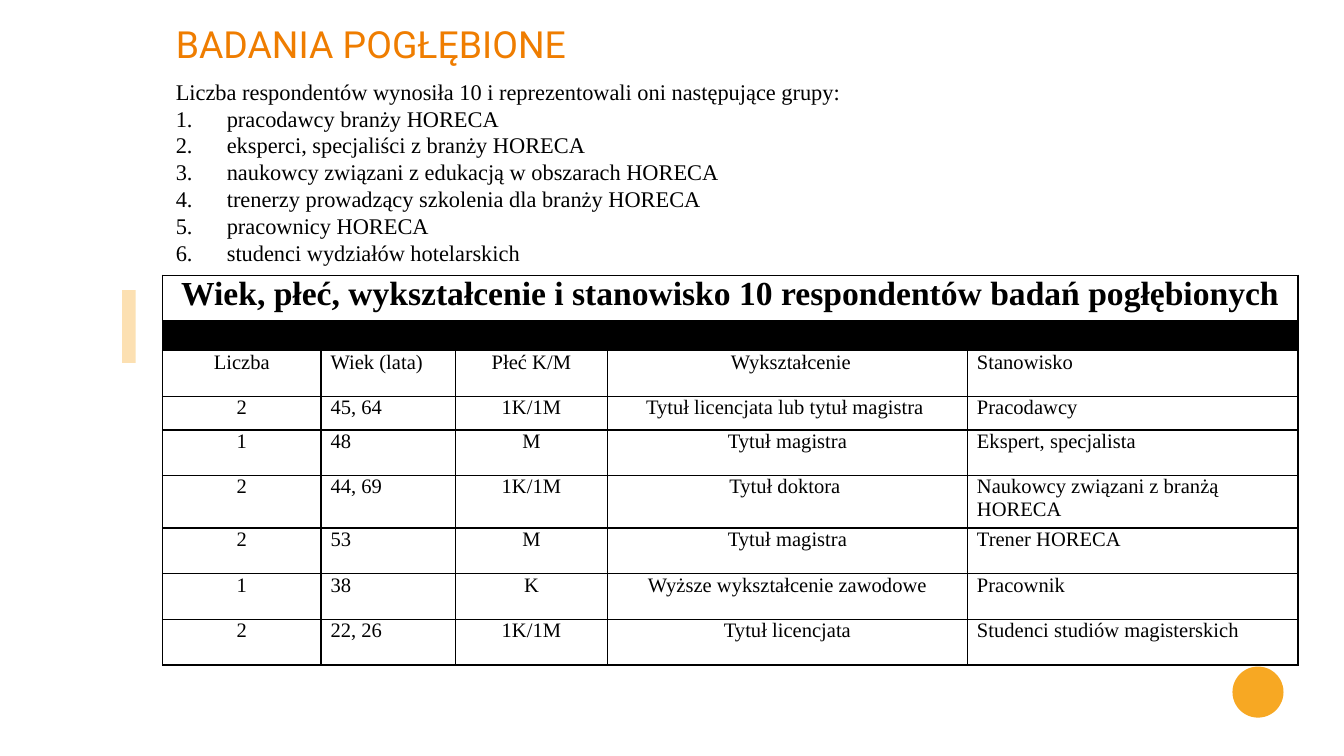
from lxml import etree
from pptx import Presentation
from pptx.dml.color import RGBColor
from pptx.enum.shapes import MSO_SHAPE
from pptx.enum.text import PP_ALIGN
from pptx.oxml.ns import qn
from pptx.util import Inches, Pt

LEFT, CENTER, JUSTIFY = PP_ALIGN.LEFT, PP_ALIGN.CENTER, PP_ALIGN.JUSTIFY
RECT, OVAL = MSO_SHAPE.RECTANGLE, MSO_SHAPE.OVAL

SERIF, SANS = "Times New Roman", "Roboto"
BLACK, WHITE, ORANGE, AMBER = "000000", "FFFFFF", "EF7D00", "F7A823"

INTRO = "Liczba respondentów wynosiła 10 i reprezentowali oni następujące grupy:"
GROUPS = [
    "pracodawcy branży HORECA",
    "eksperci, specjaliści z branży HORECA",
    "naukowcy związani z edukacją w obszarach HORECA",
    "trenerzy prowadzący szkolenia dla branży HORECA",
    "pracownicy HORECA",
    "studenci wydziałów hotelarskich",
]

TABLE_TITLE = "Wiek, płeć, wykształcenie i stanowisko 10 respondentów badań pogłębionych"
COL_WIDTHS = [1.18, 0.3, 0.7, 0.94, 0.19, 2.68, 0.47, 1.99]
ROW_HEIGHTS = [0.34, 0.22, 0.34, 0.25, 0.34, 0.39, 0.34, 0.34, 0.34]
# First and last grid column of each cell
TITLE_SPANS = [(0, 7)]
BAND_SPANS = [(0, 1), (2, 3), (4, 4), (5, 6), (7, 7)]
DATA_SPANS = [(0, 0), (1, 2), (3, 4), (5, 5), (6, 7)]
DATA_ALIGNS = [CENTER, LEFT, CENTER, CENTER, LEFT]
RESPONDENTS = [
    ["Liczba", "Wiek (lata)", "Płeć K/M", "Wykształcenie", "Stanowisko"],
    ["2", "45, 64", "1K/1M", "Tytuł licencjata lub tytuł magistra ", "Pracodawcy"],
    ["1", "48", "M", "Tytuł magistra", "Ekspert, specjalista"],
    ["2", "44, 69", "1K/1M", "Tytuł doktora ", "Naukowcy związani z branżą HORECA"],
    ["2", "53", "M", "Tytuł magistra", "Trener HORECA"],
    ["1", "38", "K", "Wyższe wykształcenie zawodowe", "Pracownik"],
    ["2", "22, 26", "1K/1M", "Tytuł licencjata", "Studenci studiów magisterskich"],
]


def rgb(color):
    return RGBColor.from_string(color)


def format_paragraph(p, size, font, color, align, bold=False):
    p.alignment = align
    for r in p.runs:
        r.font.size = Pt(size)
        r.font.name = font
        r.font.bold = bold
        r.font.color.rgb = rgb(color)


def indent_paragraph(p, left, first):
    pPr = p._p.get_or_add_pPr()
    pPr.set("marL", str(Inches(left)))
    pPr.set("indent", str(Inches(first)))
    return pPr


def number_paragraph(p):
    """Give the paragraph automatic numbering and a hanging indent."""
    pPr = indent_paragraph(p, 0.38, -0.38)
    etree.SubElement(pPr, qn("a:buFont"), typeface="+mj-lt")
    etree.SubElement(pPr, qn("a:buAutoNum"), type="arabicPeriod")


def add_accent(slide, kind, left, top, width, height, alpha=100):
    sp = slide.shapes.add_shape(
        kind, Inches(left), Inches(top), Inches(width), Inches(height))
    sp.shadow.inherit = False
    sp.line.fill.background()
    sp.fill.solid()
    sp.fill.fore_color.rgb = rgb(AMBER)
    if alpha < 100:
        clr = sp._element.spPr.find(".//" + qn("a:srgbClr"))
        etree.SubElement(clr, qn("a:alpha"), val=str(alpha * 1000))


def add_text(slide, left, top, width, height, lines, size, font, color, align):
    box = slide.shapes.add_textbox(
        Inches(left), Inches(top), Inches(width), Inches(height))
    tf = box.text_frame
    tf.word_wrap = True
    tf.text = "\n".join(lines)
    for p in tf.paragraphs:
        format_paragraph(p, size, font, color, align)
    return tf


def style_cell(cell, fill):
    """Set fill, margins and black borders, and keep empty text small."""
    cell.margin_left = cell.margin_right = Inches(0.07)
    cell.margin_top = cell.margin_bottom = 0
    end = etree.SubElement(cell.text_frame.paragraphs[0]._p, qn("a:endParaRPr"))
    end.set("sz", "1100")
    tcPr = cell._tc.get_or_add_tcPr()
    for side in ("L", "R", "T", "B"):
        ln = etree.SubElement(tcPr, qn("a:ln" + side), w=str(Pt(1)))
        solid = etree.SubElement(ln, qn("a:solidFill"))
        etree.SubElement(solid, qn("a:srgbClr"), val=BLACK)
    cell.fill.solid()
    cell.fill.fore_color.rgb = rgb(fill)


def merge_spans(table, row, spans):
    for first, last in spans:
        if last > first:
            table.cell(row, first).merge(table.cell(row, last))


def fill_cell(cell, text, size, align, bold=False):
    p = cell.text_frame.paragraphs[0]
    p.add_run().text = text
    format_paragraph(p, size, SERIF, BLACK, align, bold)
    return p


def add_respondent_table(slide, left, top):
    table = slide.shapes.add_table(
        len(ROW_HEIGHTS), len(COL_WIDTHS), Inches(left), Inches(top),
        Inches(sum(COL_WIDTHS)), Inches(sum(ROW_HEIGHTS))).table
    table.first_row = table.horz_banding = False
    for column, width in zip(table.columns, COL_WIDTHS):
        column.width = Inches(width)
    for i, (row, height) in enumerate(zip(table.rows, ROW_HEIGHTS)):
        row.height = Inches(height)
        for cell in row.cells:
            style_cell(cell, BLACK if i == 1 else WHITE)

    merge_spans(table, 0, TITLE_SPANS)
    merge_spans(table, 1, BAND_SPANS)
    fill_cell(table.cell(0, 0), TABLE_TITLE, 18, CENTER, bold=True)
    for i, values in enumerate(RESPONDENTS, start=2):
        merge_spans(table, i, DATA_SPANS)
        for (first, _), text, align in zip(DATA_SPANS, values, DATA_ALIGNS):
            p = fill_cell(table.cell(i, first), text, 11, align)
            if text == "Wykształcenie":
                indent_paragraph(p, 0, 0.05)


def main():
    prs = Presentation()
    prs.slide_width = Inches(10)
    prs.slide_height = prs.slide_width * 9 // 16
    slide = prs.slides.add_slide(prs.slide_layouts[6])

    add_accent(slide, RECT, 0.91, 2.16, 0.1, 0.54, alpha=35)
    add_accent(slide, OVAL, 9.17, 4.96, 0.38, 0.38)
    tf = add_text(slide, 1.21, 0.53, 6.94, 1.51, [INTRO] + GROUPS,
                  12, SERIF, BLACK, JUSTIFY)
    for p in tf.paragraphs[1:]:
        number_paragraph(p)
    add_text(slide, 1.21, 0.11, 7.96, 0.44, ["BADANIA POGŁĘBIONE"],
             20, SANS, ORANGE, LEFT)
    add_respondent_table(slide, 1.21, 2.05)

    prs.save("out.pptx")


if __name__ == "__main__":
    main()
